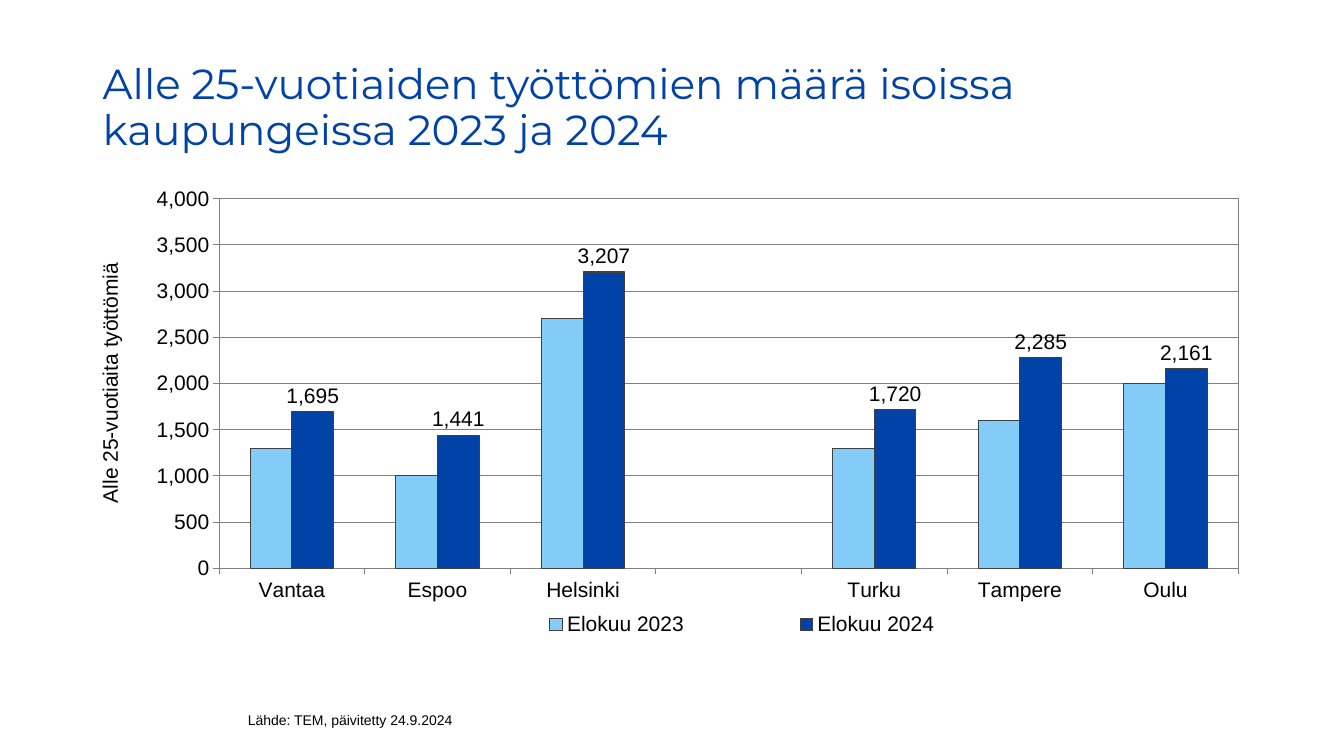
import pptx
import pptx.chart.data
import pptx.dml.color
import pptx.enum.chart
import pptx.enum.text
import pptx.oxml
import pptx.oxml.ns
import pptx.util
from pptx.util import Inches

CITIES = ["Vantaa", "Espoo", "Helsinki", "", "Turku", "Tampere", "Oulu"]
SERIES = [
    ("Elokuu 2023", "84CCF8", [1300, 1000, 2700, None, 1300, 1600, 2000]),
    ("Elokuu 2024", "0042A5", [1695, 1441, 3207, None, 1720, 2285, 2161]),
]
GRAY = "808080"


def color(value):
    return pptx.dml.color.RGBColor.from_string(value)


def style_font(font, size, name, value):
    font.size = pptx.util.Pt(size)
    font.name = name
    font.bold = False
    font.color.rgb = color(value)


def style_line(line, value):
    line.color.rgb = color(value)
    line.width = pptx.util.Pt(0.75)


def add_text(slide, box, text, size, name, value, spacing=1.0):
    shape = slide.shapes.add_textbox(*map(Inches, box))
    frame = shape.text_frame
    frame.word_wrap = True
    frame.vertical_anchor = pptx.enum.text.MSO_ANCHOR.TOP
    paragraph = frame.paragraphs[0]
    paragraph.line_spacing = spacing
    run = paragraph.add_run()
    run.text = text
    style_font(run.font, size, name, value)


def set_layout(element, index, x, y, width=None, height=None, inner=False):
    """Place a chart part by fractions of the chart area."""
    for old in element.findall(pptx.oxml.ns.qn("c:layout")):
        element.remove(old)
    items = [("layoutTarget", "inner")] if inner else []
    items += [("xMode", "edge"), ("yMode", "edge"), ("x", x), ("y", y)]
    if width is not None:
        items += [("w", width), ("h", height)]
    body = "".join(f'<c:{tag} val="{value}"/>' for tag, value in items)
    element.insert(index, pptx.oxml.parse_xml(
        f'<c:layout {pptx.oxml.ns.nsdecls("c")}><c:manualLayout>{body}'
        '</c:manualLayout></c:layout>'))


def style_axes(chart):
    value_axis, category_axis = chart.value_axis, chart.category_axis
    value_axis.minimum_scale = 0
    value_axis.maximum_scale = 4000
    value_axis.major_unit = 500
    value_axis.tick_labels.number_format = "#,##0"
    value_axis.tick_labels.number_format_is_linked = False
    value_axis.has_major_gridlines = True
    style_line(value_axis.major_gridlines.format.line, GRAY)
    for axis in (value_axis, category_axis):
        axis.major_tick_mark = pptx.enum.chart.XL_TICK_MARK.OUTSIDE
        style_line(axis.format.line, GRAY)

    # Rotated value axis title
    frame = value_axis.axis_title.text_frame
    run = frame.paragraphs[0].add_run()
    run.text = "Alle 25-vuotiaita työttömiä"
    style_font(run.font, 15, "Arial", "000000")
    body = frame._txBody.bodyPr
    body.set("rot", "-5400000")
    body.set("vert", "horz")
    set_layout(value_axis.axis_title._element, 1, 0, 0.16)


def style_series(series, fill):
    series.format.fill.solid()
    series.format.fill.fore_color.rgb = color(fill)
    style_line(series.format.line, "404040")


def add_labels(series):
    labels = series.data_labels
    labels.show_value = True
    labels.position = pptx.enum.chart.XL_LABEL_POSITION.OUTSIDE_END
    labels.number_format = "#,##0"
    labels.number_format_is_linked = False
    style_font(labels.font, 15, "Arial", "000000")


def add_city_chart(slide, box):
    data = pptx.chart.data.CategoryChartData()
    data.categories = CITIES
    for name, _, values in SERIES:
        data.add_series(name, values)
    chart = slide.shapes.add_chart(
        pptx.enum.chart.XL_CHART_TYPE.COLUMN_CLUSTERED,
        *map(Inches, box), data).chart
    chart.has_title = False
    style_font(chart.font, 15, "Arial", "000000")
    style_axes(chart)

    # Columns
    plot = chart.plots[0]
    plot.gap_width = 150
    plot.overlap = 0
    plot.vary_by_categories = False
    for series, (_, fill, _) in zip(plot.series, SERIES):
        style_series(series, fill)
    add_labels(plot.series[1])

    # Framed plot area
    plot_area = chart._chartSpace.chart.plotArea
    set_layout(plot_area, 0, 0.109, 0.029, 0.879, 0.804, inner=True)
    plot_area.append(pptx.oxml.parse_xml(
        f'<c:spPr {pptx.oxml.ns.nsdecls("c", "a")}><a:noFill/><a:ln w="9525">'
        f'<a:solidFill><a:srgbClr val="{GRAY}"/></a:solidFill></a:ln></c:spPr>'))

    # Legend
    chart.has_legend = True
    chart.legend.position = pptx.enum.chart.XL_LEGEND_POSITION.BOTTOM
    chart.legend.include_in_layout = False
    style_font(chart.legend.font, 15, "Arial", "000000")
    set_layout(chart.legend._element, 1, 0.3, 0.92, 0.52, 0.07)


def main():
    presentation = pptx.Presentation()
    presentation.slide_width = Inches(13.33)
    presentation.slide_height = Inches(7.5)
    slide = presentation.slides.add_slide(presentation.slide_layouts[6])

    # Title, chart and source line
    add_text(slide, (0.92, 0.58, 11.07, 1.09),
             "Alle 25-vuotiaiden työttömien määrä isoissa kaupungeissa 2023 ja 2024",
             30, "Montserrat", "0042A6", 0.9)
    add_city_chart(slide, (0.92, 1.84, 11.5, 4.56))
    add_text(slide, (2.36, 7.01, 4.61, 0.4), "Lähde: TEM, päivitetty 24.9.2024",
             10, "Arial", "000000")

    presentation.save("out.pptx")


if __name__ == "__main__":
    main()
